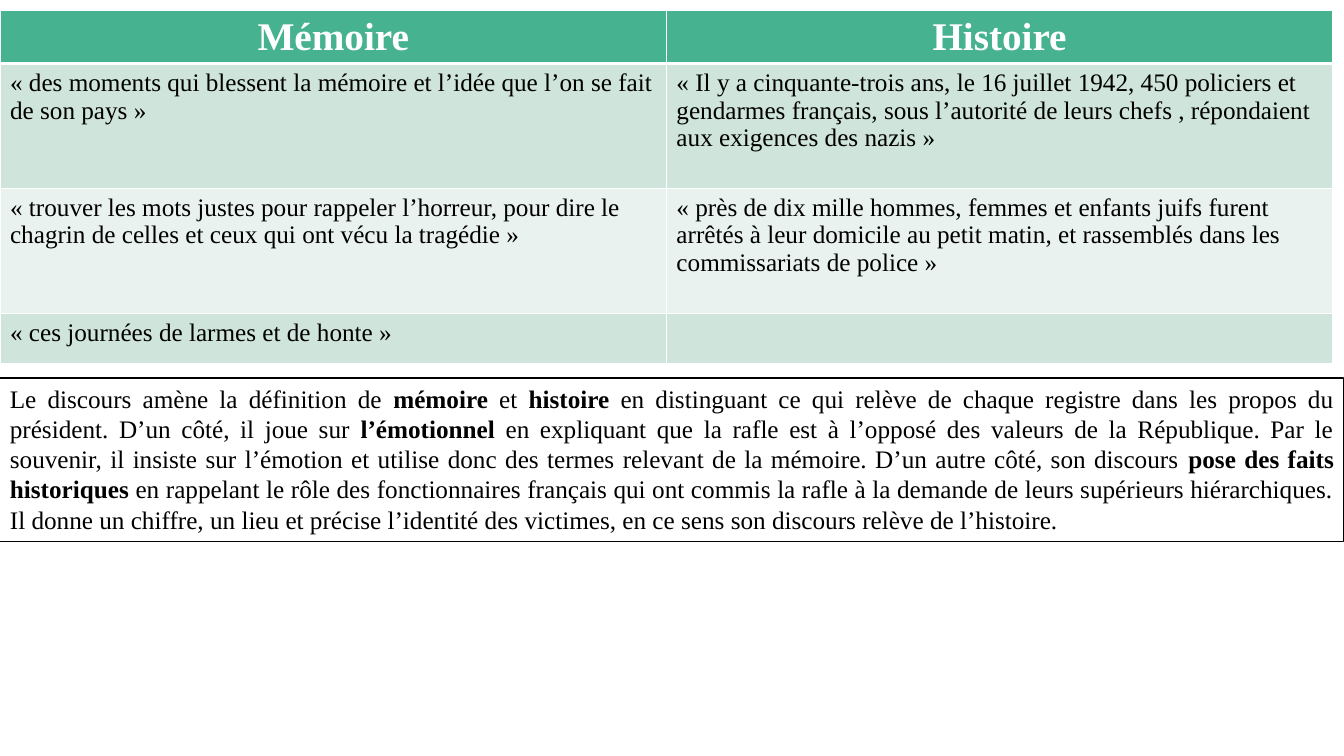
from lxml.etree import SubElement
from pptx import Presentation
from pptx.dml.color import RGBColor
from pptx.enum.shapes import MSO_SHAPE
from pptx.enum.text import MSO_ANCHOR, MSO_AUTO_SIZE, PP_ALIGN
from pptx.oxml.ns import qn
from pptx.util import Inches, Pt

WHITE = RGBColor(0xFF, 0xFF, 0xFF)
BLACK = RGBColor(0x00, 0x00, 0x00)
GREEN = RGBColor(0x46, 0xB2, 0x90)
SAGE = RGBColor(0xCF, 0xE4, 0xDB)
MIST = RGBColor(0xE9, 0xF2, 0xEE)

HEADS = ("Mémoire", "Histoire")
QUOTES = (
    ("des moments qui blessent la mémoire et l’idée que l’on se fait de son pays",
     "Il y a cinquante-trois ans, le 16 juillet 1942, 450 policiers et gendarmes "
     "français, sous l’autorité de leurs chefs , répondaient aux exigences des nazis"),
    ("trouver les mots justes pour rappeler l’horreur, pour dire le chagrin de "
     "celles et ceux qui ont vécu la tragédie",
     "près de dix mille hommes, femmes et enfants juifs furent arrêtés à leur "
     "domicile au petit matin, et rassemblés dans les commissariats de police"),
    ("ces journées de larmes et de honte", ""),
)
# Plain and bold parts alternate, starting with plain.
SUMMARY = (
    "Le discours amène la définition de ", "mémoire", " et ", "histoire",
    " en distinguant ce qui relève de chaque registre dans les propos du président. "
    "D’un côté, il joue sur ", "l’émotionnel",
    " en expliquant que la rafle est à l’opposé des valeurs de la République. Par le "
    "souvenir, il insiste sur l’émotion et utilise donc des termes relevant de la "
    "mémoire. D’un autre côté, son discours ", "pose des faits historiques ",
    "en rappelant le rôle des fonctionnaires français qui ont commis la rafle à la "
    "demande de leurs supérieurs hiérarchiques. Il donne un chiffre, un lieu et "
    "précise l’identité des victimes, en ce sens son discours relève de l’histoire.",
)


class Board:
    """Style and current slide, laid out on a grid of 120 columns by 75 rows."""
    face = "Times New Roman"
    body, head = 18, 28

    def __init__(self, deck):
        self.slide = deck.slides.add_slide(deck.slide_layouts[6])
        self.col = deck.slide_width / 120
        self.row = deck.slide_height / 75

    def place(self, left, top, wide, high):
        return (int(left * self.col), int(top * self.row),
                int(wide * self.col), int(high * self.row))

    def style(self, font, size, color, bold=False):
        font.name, font.size, font.bold = self.face, Pt(size), bold
        font.color.rgb = color

    def edge(self, cell, under):
        """Draw white cell borders, the lower one `under` points wide."""
        props = cell._tc.get_or_add_tcPr()
        for side, width in zip("LRTB", (1, 1, 1, under)):
            line = SubElement(props, qn(f"a:ln{side}"), w=str(Pt(width)))
            fill = SubElement(line, qn("a:solidFill"))
            SubElement(fill, qn("a:srgbClr"), val=str(WHITE))

    def cell(self, cell, text, fill, top):
        self.edge(cell, 3 if top else 1)
        cell.fill.solid()
        cell.fill.fore_color.rgb = fill
        para = cell.text_frame.paragraphs[0]
        para.text = text
        if top:
            para.alignment = PP_ALIGN.CENTER
        for run in para.runs:
            self.style(run.font, self.head if top else self.body,
                       WHITE if top else BLACK, top)

    def table(self, rows, left, top, wide, highs):
        box = self.place(left, top, wide, sum(highs))
        grid = self.slide.shapes.add_table(len(rows), len(rows[0]), *box).table
        for r, (texts, high) in enumerate(zip(rows, highs)):
            grid.rows[r].height = int(high * self.row)
            fill = (MIST, SAGE)[r % 2] if r else GREEN
            for c, text in enumerate(texts):
                self.cell(grid.cell(r, c), text, fill, r == 0)

    def note(self, parts, *box):
        """Add a framed, justified paragraph whose odd parts are bold."""
        frame = self.slide.shapes.add_shape(MSO_SHAPE.RECTANGLE, *self.place(*box))
        frame.shadow.inherit = False
        frame.fill.background()
        frame.line.color.rgb = BLACK
        frame.line.width = Pt(0.75)
        text = frame.text_frame
        text.word_wrap = True
        text.auto_size = MSO_AUTO_SIZE.SHAPE_TO_FIT_TEXT
        text.vertical_anchor = MSO_ANCHOR.TOP
        para = text.paragraphs[0]
        para.alignment = PP_ALIGN.JUSTIFY
        for i, part in enumerate(parts):
            run = para.add_run()
            run.text = part
            self.style(run.font, self.body, BLACK, i % 2 == 1)


def main():
    deck = Presentation()
    deck.slide_width, deck.slide_height = Inches(13.33), Inches(7.5)
    board = Board(deck)
    quotes = [[f"« {text} »" if text else "" for text in row] for row in QUOTES]
    board.table([HEADS, *quotes], 0, 1, 119, (5, 12.4, 12.4, 5))
    board.note(SUMMARY, 0, 37.5, 120, 16.2)
    deck.save("out.pptx")


if __name__ == "__main__":
    main()
